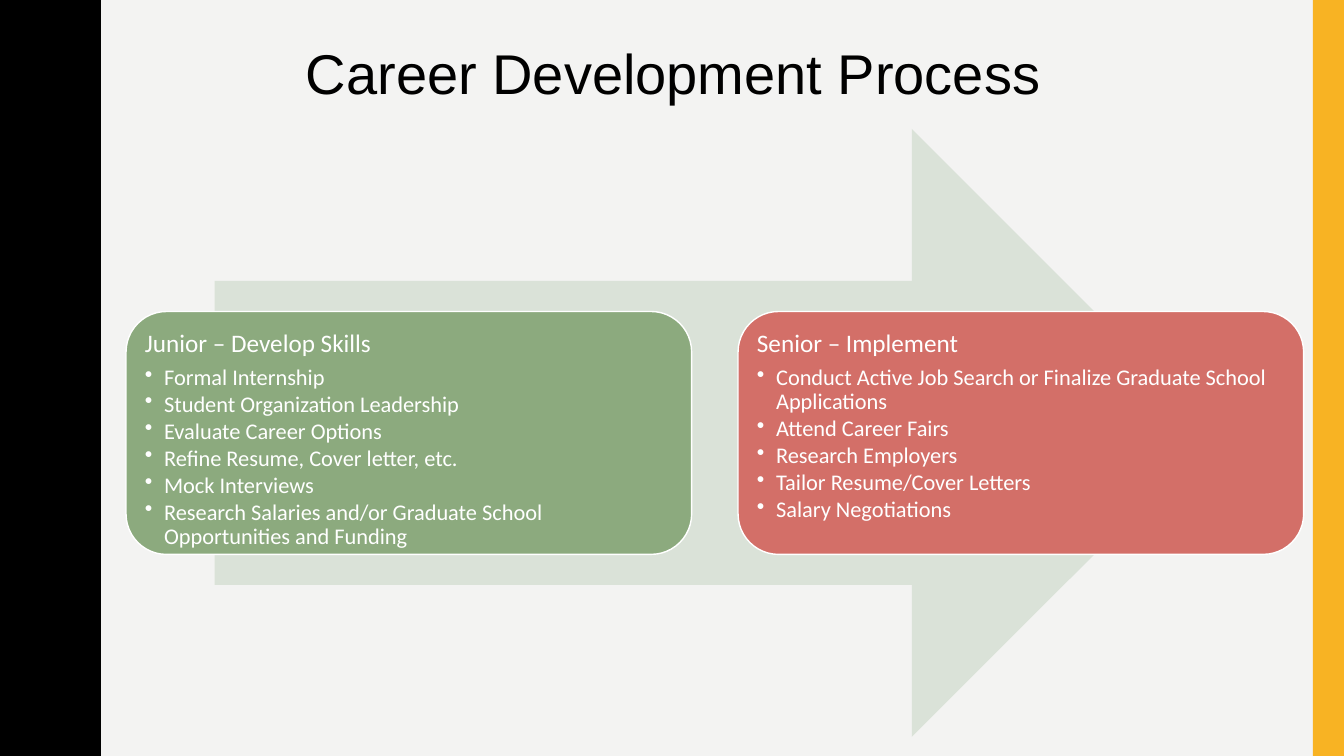
"""Build the career development process slide."""
from lxml import etree
from pptx import Presentation
from pptx import util as u
from pptx.dml.color import RGBColor
from pptx.enum import shapes, text
from pptx.oxml.ns import qn

COLORS = {
    "background": "F3F3F2",
    "black": "000000",
    "white": "FFFFFF",
    "gold": "F8B323",
    "arrow": "DAE2D8",
    "junior": "8CAA7E",
    "senior": "D36F68",
}
WIDTH, HEIGHT = 13.33, 7.5
HALF_WAVE = [
    (0.78, 0), (0.78, 0.07), (0.79, 0.14), (0.8, 0.2), (0.81, 0.25),
    (0.83, 0.29), (0.85, 0.33), (0.87, 0.38), (0.89, 0.42), (0.91, 0.46),
    (0.93, 0.5), (0.95, 0.55), (0.96, 0.61), (0.97, 0.68), (0.97, 0.75),
]
WAVE_LENGTH = 1.5
STAGES = [
    ("junior", "Junior – Develop Skills", [
        "Formal Internship",
        "Student Organization Leadership",
        "Evaluate Career Options",
        "Refine Resume, Cover letter, etc.",
        "Mock Interviews",
        "Research Salaries and/or Graduate School Opportunities and Funding",
    ]),
    ("senior", "Senior – Implement", [
        "Conduct Active Job Search or Finalize Graduate School Applications",
        "Attend Career Fairs",
        "Research Employers",
        "Tailor Resume/Cover Letters",
        "Salary Negotiations",
    ]),
]
STAGE_LEFT, STAGE_STEP = 1.25, 6.07


def color(name):
    return RGBColor.from_string(COLORS[name])


def paint(shape, fill, line=None):
    shape.shadow.inherit = False
    shape.fill.solid()
    shape.fill.fore_color.rgb = color(fill)
    if line:
        shape.line.color.rgb = color(line)
        shape.line.width = u.Pt(1)
    else:
        shape.line.fill.background()


def add_block(page, kind, left, top, width, height, fill, line=None):
    block = page.shapes.add_shape(
        kind, u.Inches(left), u.Inches(top), u.Inches(width), u.Inches(height))
    paint(block, fill, line)
    return block


def add_wave(page):
    points = []
    for index in range(round(HEIGHT / WAVE_LENGTH)):
        top = index * WAVE_LENGTH
        points += [(x, top + y) for x, y in HALF_WAVE]
        points += [(x, top + WAVE_LENGTH - y) for x, y in HALF_WAVE[-2::-1]]
    points.append((0, HEIGHT))
    builder = page.shapes.build_freeform(0, 0, scale=u.Inches(1))
    builder.add_line_segments(points, close=True)
    paint(builder.convert_to_shape(), "black")


def format_paragraph(para, name, size, ink, after=0):
    para.space_after = u.Pt(after)
    para.font.name = name
    para.font.size = u.Pt(size)
    para.font.color.rgb = color(ink)


def add_bullet(para):
    properties = para._p.get_or_add_pPr()
    properties.set("marL", str(u.Inches(0.19)))
    properties.set("indent", str(-u.Inches(0.19)))
    etree.SubElement(properties, qn("a:buChar")).set("char", "•")


def add_stage(page, left, fill, heading, steps):
    box = add_block(page, shapes.MSO_SHAPE.ROUNDED_RECTANGLE,
                    left, 3.09, 5.61, 2.41, fill, "white")
    frame = box.text_frame
    frame.word_wrap = True
    frame.vertical_anchor = text.MSO_ANCHOR.TOP
    frame.margin_left = frame.margin_right = u.Inches(0.07)
    frame.margin_top = frame.margin_bottom = u.Inches(0.07)
    para = frame.paragraphs[0]
    para.text = heading
    format_paragraph(para, "Calibri", 18, "white", 6)
    for step in steps:
        para = frame.add_paragraph()
        para.text = step
        para.level = 1
        add_bullet(para)
        format_paragraph(para, "Calibri", 16, "white", 2)
    for para in frame.paragraphs:
        para.alignment = text.PP_ALIGN.LEFT
        para.line_spacing = 0.9


def set_title(page, wording):
    title = page.shapes.title
    title.left, title.top = u.Inches(2.11), u.Inches(0.33)
    title.width, title.height = u.Inches(9.13), u.Inches(0.77)
    frame = title.text_frame
    frame.text = wording
    frame.vertical_anchor = text.MSO_ANCHOR.TOP
    frame.auto_size = text.MSO_AUTO_SIZE.NONE
    para = frame.paragraphs[0]
    para.alignment = text.PP_ALIGN.CENTER
    format_paragraph(para, "Arial", 40, "black")


def main():
    deck = Presentation()
    deck.slide_width, deck.slide_height = u.Inches(WIDTH), u.Inches(HEIGHT)
    page = deck.slides.add_slide(deck.slide_layouts[5])
    page.background.fill.solid()
    page.background.fill.fore_color.rgb = color("background")
    set_title(page, "Career Development Process")
    add_wave(page)
    add_block(page, shapes.MSO_SHAPE.RECTANGLE, 13.02, 0, 0.31, HEIGHT, "gold")
    add_block(page, shapes.MSO_SHAPE.RIGHT_ARROW, 2.13, 1.28, 9.93, 6.03, "arrow")
    for index, (fill, heading, steps) in enumerate(STAGES):
        add_stage(page, STAGE_LEFT + index * STAGE_STEP, fill, heading, steps)
    deck.save("out.pptx")


if __name__ == "__main__":
    main()
